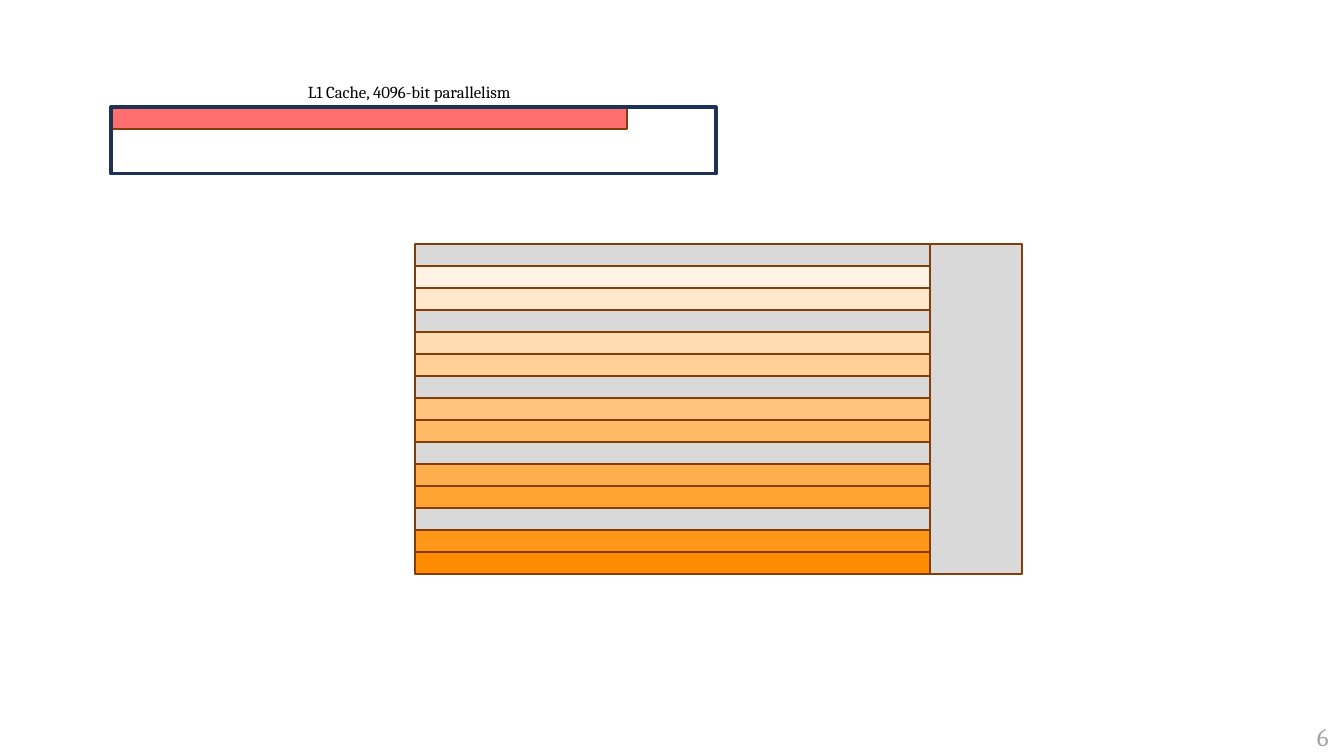
from lxml.etree import SubElement
from pptx import Presentation
from pptx.dml.color import RGBColor
from pptx.enum.shapes import MSO_SHAPE as Shape
from pptx.oxml.ns import qn
from pptx.util import Pt

EMU_PER_PX = 914400 / 100.8

ORANGE = RGBColor(0xFF, 0x8C, 0x00)
RED = RGBColor(0xFF, 0x14, 0x14)
GREY = RGBColor(0xD9, 0xD9, 0xD9)
BROWN = RGBColor(0x84, 0x3C, 0x0B)
NAVY = RGBColor(0x1E, 0x32, 0x56)
BLACK = RGBColor(0x00, 0x00, 0x00)
PAGE_GREY = RGBColor(0xA5, 0xA5, 0xA5)


def px(length):
    return round(length * EMU_PER_PX)


def write(frame, text, size=12, color=BLACK, font="Cambria"):
    run = frame.paragraphs[0].add_run()
    run.text = text
    run.font.name = font
    run.font.size = Pt(size)
    run.font.color.rgb = color


class Canvas:
    def __init__(self, slide):
        self.slide = slide

    def block(self, left, top, width, height, fill=None, opacity=100, line=BROWN, weight=1):
        block = self.slide.shapes.add_shape(Shape.RECTANGLE, *map(px, (left, top, width, height)))
        block.shadow.inherit = False
        if fill is None:
            block.fill.background()
        else:
            block.fill.solid()
            block.fill.fore_color.rgb = fill
            if opacity < 100:
                tint = block.element.spPr.find(qn("a:solidFill")).find(qn("a:srgbClr"))
                SubElement(tint, qn("a:alpha")).set("val", str(opacity * 1000))
        block.line.color.rgb = line
        block.line.width = Pt(weight)

    def label(self, left, top, width, height, text, **style):
        frame = self.slide.shapes.add_textbox(*map(px, (left, top, width, height))).text_frame
        frame.word_wrap = True
        write(frame, text, **style)


def main():
    deck = Presentation()
    deck.slide_width, deck.slide_height = px(1344), px(756)
    canvas = Canvas(deck.slides.add_slide(deck.slide_layouts[6]))

    row_width, row_height, row_count = 515, 22, 15
    matrix_left, matrix_top = 415, 244
    cache_left, cache_top = 111, 107

    opacity = 0
    for row in range(row_count):
        place = matrix_left, matrix_top + row * row_height, row_width, row_height
        if row % 3 == 0:
            canvas.block(*place, fill=GREY)
        else:
            opacity += 10
            canvas.block(*place, fill=ORANGE, opacity=opacity)
    canvas.block(matrix_left + row_width, matrix_top, 92, row_count * row_height, fill=GREY)

    canvas.block(cache_left + 1, cache_top, row_width, row_height, fill=RED, opacity=61)
    canvas.block(cache_left, cache_top, 605, 67, line=NAVY, weight=2.25)
    canvas.label(298, 77, 274, 30, "L1 Cache, 4096-bit parallelism")

    canvas.label(1307, 716, 36, 40, "6", size=18, color=PAGE_GREY)
    deck.save("out.pptx")


if __name__ == "__main__":
    main()
